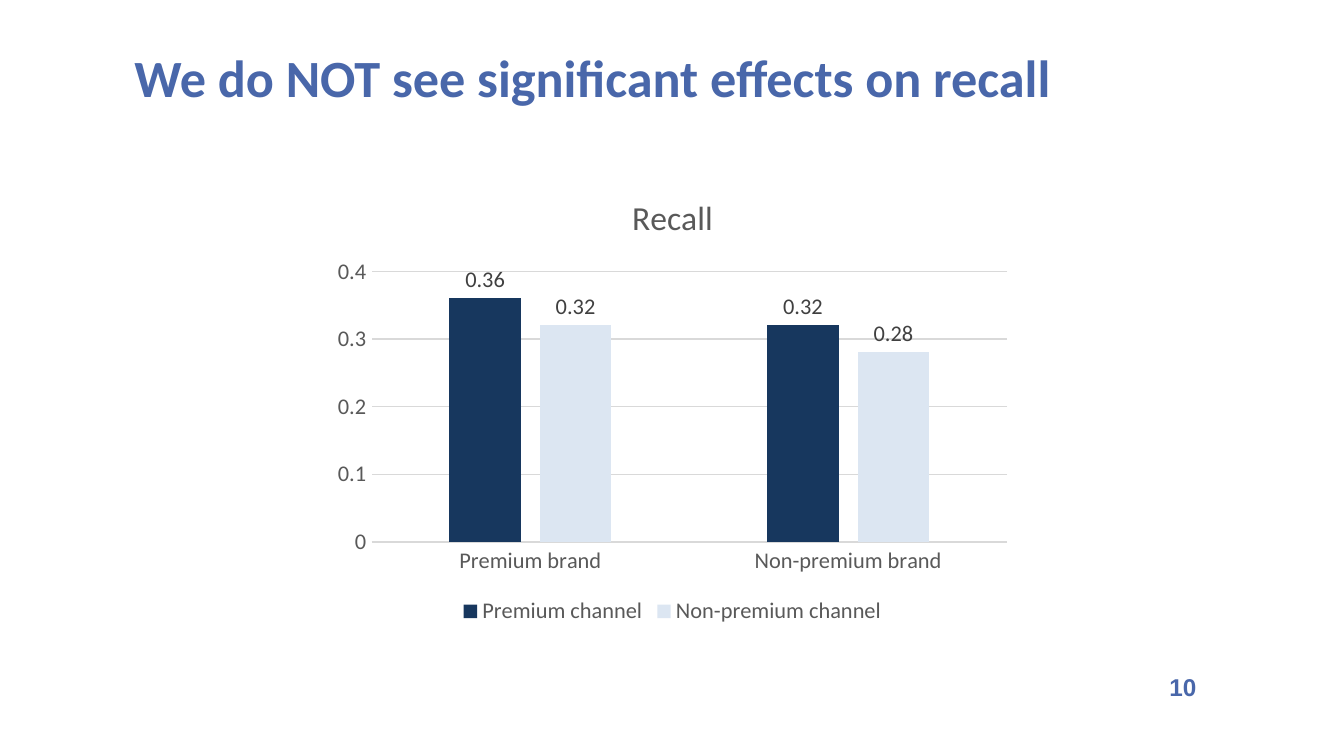
import pptx
import pptx.chart.data
import pptx.dml.color
import pptx.enum.chart
import pptx.enum.text
import pptx.util

Pt = pptx.util.Pt
RGBColor = pptx.dml.color.RGBColor
PP_ALIGN = pptx.enum.text.PP_ALIGN
XL = pptx.enum.chart

BLUE = RGBColor(0x49, 0x67, 0xAA)
NAVY = RGBColor(0x17, 0x37, 0x5E)
PALE = RGBColor(0xDC, 0xE6, 0xF2)
GRAY = RGBColor(0x59, 0x59, 0x59)
DARK = RGBColor(0x40, 0x40, 0x40)
GRID = RGBColor(0xD9, 0xD9, 0xD9)


def format_font(font, size=12, color=GRAY, name="Calibri", bold=False):
    font.size = Pt(size)
    font.color.rgb = color
    font.name = name
    font.bold = bold


def write(tf, text, align=PP_ALIGN.LEFT, **style):
    """Put one formatted paragraph into a text frame."""
    p = tf.paragraphs[0]
    p.alignment = align
    r = p.add_run()
    r.text = text
    format_font(r.font, **style)


class Deck:
    def __init__(self, width, height):
        self.prs = pptx.Presentation()
        self.prs.slide_width = Pt(width)
        self.prs.slide_height = Pt(height)
        self.s = None

    def add_slide(self):
        self.s = self.prs.slides.add_slide(self.prs.slide_layouts.get_by_name("Title Only"))

    def title(self, text, x, y, w, h):
        sp = self.s.shapes.title
        sp.left, sp.top, sp.width, sp.height = Pt(x), Pt(y), Pt(w), Pt(h)
        tf = sp.text_frame
        tf.margin_left = tf.margin_right = tf.margin_top = tf.margin_bottom = 0
        tf.vertical_anchor = pptx.enum.text.MSO_ANCHOR.TOP
        tf.auto_size = pptx.enum.text.MSO_AUTO_SIZE.NONE
        write(tf, text, size=28, color=BLUE, bold=True)

    def page_number(self, text, x, y, w, h):
        tf = self.s.shapes.add_textbox(Pt(x), Pt(y), Pt(w), Pt(h)).text_frame
        tf.word_wrap = True
        write(tf, text, align=PP_ALIGN.RIGHT, size=13, color=BLUE, name="Arial", bold=True)

    def column_chart(self, title, cats, series, x, y, w, h):
        """Draw clustered columns; series holds (name, values, color) rows."""
        data = pptx.chart.data.CategoryChartData()
        data.categories = cats
        for name, values, _ in series:
            data.add_series(name, values)
        chart = self.s.shapes.add_chart(
            XL.XL_CHART_TYPE.COLUMN_CLUSTERED, Pt(x), Pt(y), Pt(w), Pt(h), data).chart
        format_font(chart.font)
        chart.has_title = True
        write(chart.chart_title.text_frame, title, align=PP_ALIGN.CENTER, size=18)
        chart.chart_title.include_in_layout = False

        chart.has_legend = True
        chart.legend.position = XL.XL_LEGEND_POSITION.BOTTOM
        chart.legend.include_in_layout = False
        format_font(chart.legend.font)

        for axis in (chart.category_axis, chart.value_axis):
            axis.major_tick_mark = axis.minor_tick_mark = XL.XL_TICK_MARK.NONE
            format_font(axis.tick_labels.font)
        value_axis = chart.value_axis
        value_axis.minimum_scale, value_axis.maximum_scale = 0, 0.4
        value_axis.major_unit = 0.1
        value_axis.format.line.fill.background()
        for line in (chart.category_axis.format.line, value_axis.major_gridlines.format.line):
            line.color.rgb = GRID
            line.width = Pt(0.75)

        plot = chart.plots[0]
        plot.vary_by_categories = False
        plot.gap_width = 219
        plot.overlap = -27
        for bars, (_, _, color) in zip(plot.series, series):
            bars.format.fill.solid()
            bars.format.fill.fore_color.rgb = color
            labels = bars.data_labels
            labels.show_value = True
            labels.position = XL.XL_LABEL_POSITION.OUTSIDE_END
            format_font(labels.font, color=DARK)


def main():
    deck = Deck(720, 405)
    deck.add_slide()
    deck.page_number("10", 350, 356.4, 298, 23)
    deck.title("We do NOT see significant effects on recall", 72, 24, 575, 51)
    deck.column_chart(
        "Recall",
        ["Premium brand", "Non-premium brand"],
        [("Premium channel", (0.36, 0.32), NAVY),
         ("Non-premium channel", (0.32, 0.28), PALE)],
        173.5, 92, 373.5, 245.5)
    deck.prs.save("out.pptx")


if __name__ == "__main__":
    main()
